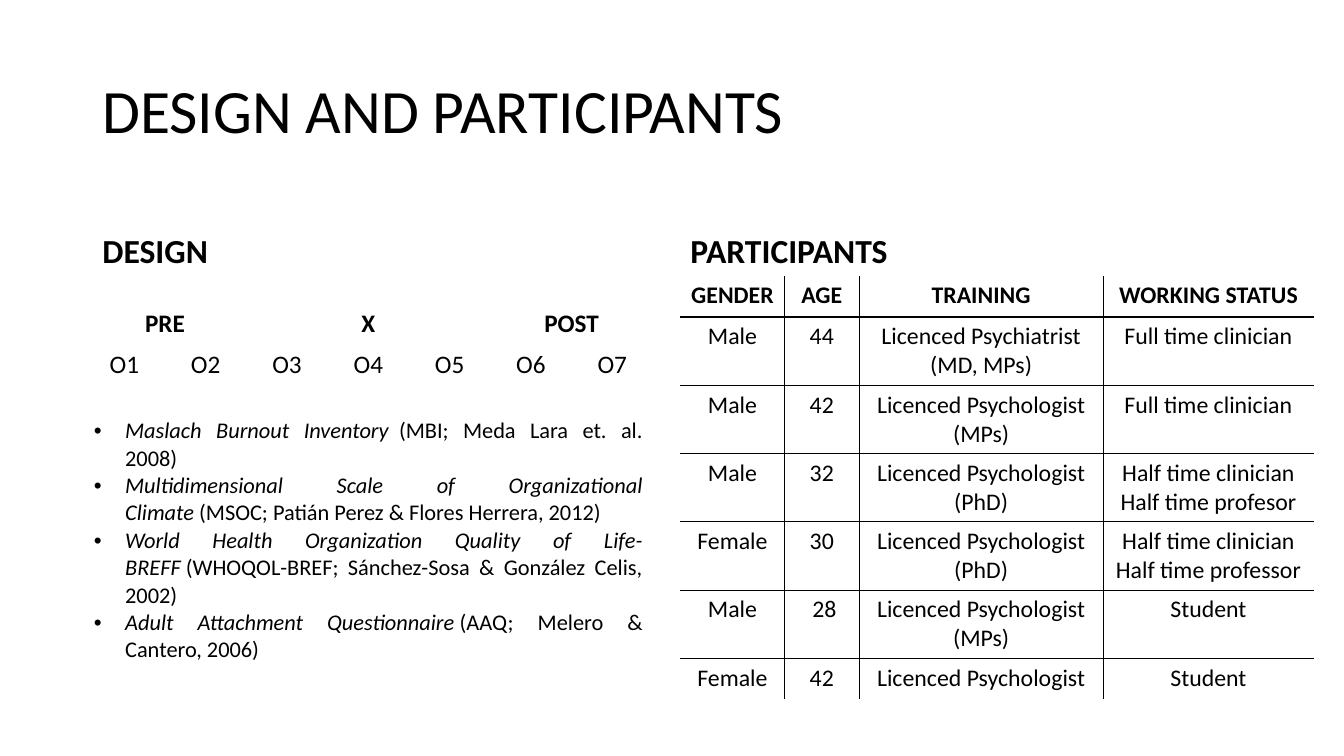
"""Build the slide on study design and participants."""
from lxml import etree
from pptx import Presentation
from pptx.dml.color import RGBColor
from pptx.enum.text import MSO_ANCHOR, PP_ALIGN
from pptx.oxml.ns import qn
from pptx.util import Cm, Pt

BLACK = RGBColor(0x00, 0x00, 0x00)
WHITE = RGBColor(0xFF, 0xFF, 0xFF)
CENTER, JUSTIFY = PP_ALIGN.CENTER, PP_ALIGN.JUSTIFY
MIDDLE, BOTTOM = MSO_ANCHOR.MIDDLE, MSO_ANCHOR.BOTTOM
FONT = "Calibri"
HARD_SPACE = chr(160)

TITLE = "DESIGN AND PARTICIPANTS"
HEADINGS = [("DESIGN", 2.33), ("PARTICIPANTS", 17.15)]
PHASES = [("PRE", 0, 1), ("X", 2, 4), ("POST", 5, 6)]
OBSERVATIONS = ["O1", "O2", "O3", "O4", "O5", "O6", "O7"]
INSTRUMENTS = [
    ("Maslach Burnout Inventory" + HARD_SPACE,
     "(MBI; Meda Lara et. al. 2008)"),
    ("Multidimensional Scale of Organizational Climate",
     "(MSOC; Patián Perez & Flores Herrera, 2012)"),
    ("World Health Organization Quality of Life-BREFF",
     "(WHOQOL-BREF; Sánchez-Sosa & González Celis, 2002)"),
    ("Adult Attachment Questionnaire", "(AAQ; Melero & Cantero, 2006)"),
]
PARTICIPANTS = [
    ("GENDER", "AGE", "TRAINING", "WORKING STATUS"),
    ("Male", "44", "Licenced Psychiatrist (MD, MPs)", "Full time clinician"),
    ("Male", "42", "Licenced Psychologist (MPs)", "Full time clinician"),
    ("Male", "32", "Licenced Psychologist (PhD)",
     "Half time clinician\nHalf time profesor"),
    ("Female", "30", "Licenced Psychologist (PhD)",
     "Half time clinician\nHalf time professor"),
    ("Male", " 28", "Licenced Psychologist (MPs)", "Student"),
    ("Female", "42", "Licenced Psychologist", "Student"),
]
DESIGN_WIDTHS = [2.05] * len(OBSERVATIONS)
PARTICIPANT_WIDTHS = [2.62, 1.88, 6.15, 5.31]
ROW_HEIGHT = 1.03
TALL_ROW_HEIGHT = 1.72
INDENT = Cm(0.79)


def style_span(span, size, bold=False, italic=False):
    span.font.name = FONT
    span.font.size = Pt(size)
    span.font.bold = bold
    span.font.italic = italic
    span.font.color.rgb = BLACK


def add_heading(page, text, left, top, width, height, size, bold, anchor):
    box = page.shapes.add_textbox(Cm(left), Cm(top), Cm(width), Cm(height))
    frame = box.text_frame
    frame.word_wrap = True
    frame.vertical_anchor = anchor
    frame.text = text
    para = frame.paragraphs[0]
    para.line_spacing = 0.9
    style_span(para.runs[0], size, bold)


def add_grid(page, left, top, widths, heights):
    frame = page.shapes.add_table(
        len(heights), len(widths), Cm(left), Cm(top),
        Cm(sum(widths)), Cm(sum(heights)))
    table = frame.table
    table.first_row = False
    table.horz_banding = False
    for column, width in zip(table.columns, widths):
        column.width = Cm(width)
    for row, height in zip(table.rows, heights):
        row.height = Cm(height)
    return table


def finish_cell(cell, left=WHITE, right=WHITE, top=WHITE, bottom=WHITE):
    properties = cell._tc.get_or_add_tcPr()
    edges = {"a:lnL": left, "a:lnR": right, "a:lnT": top, "a:lnB": bottom}
    for tag, color in edges.items():
        line = etree.SubElement(properties, qn(tag), w=str(Pt(1)))
        fill = etree.SubElement(line, qn("a:solidFill"))
        etree.SubElement(fill, qn("a:srgbClr"), val=str(color))
    cell.fill.solid()
    cell.fill.fore_color.rgb = WHITE


def fill_cell(cell, text, size, bold=False):
    cell.text_frame.text = text
    for para in cell.text_frame.paragraphs:
        para.alignment = CENTER
        style_span(para.runs[0], size, bold)


def add_design(page):
    table = add_grid(page, 2.11, 7.65, DESIGN_WIDTHS, [ROW_HEIGHT] * 3)
    for row in table.rows:
        for cell in row.cells:
            finish_cell(cell)
    for text, first, last in PHASES:
        table.cell(0, first).merge(table.cell(0, last))
        fill_cell(table.cell(0, first), text, 18, True)
    for index, text in enumerate(OBSERVATIONS):
        fill_cell(table.cell(1, index), text, 18)

    listing = table.cell(2, 0)
    listing.merge(table.cell(2, len(OBSERVATIONS) - 1))
    listing.margin_top = Cm(0.81)
    frame = listing.text_frame
    for index, (name, citation) in enumerate(INSTRUMENTS):
        para = frame.add_paragraph() if index else frame.paragraphs[0]
        para.alignment = JUSTIFY
        for text, italic in ((name, True), (HARD_SPACE + citation, False)):
            span = para.add_run()
            span.text = text
            style_span(span, 16, italic=italic)
        properties = para._p.get_or_add_pPr()
        properties.set("marL", str(INDENT))
        properties.set("indent", str(-INDENT))
        etree.SubElement(properties, qn("a:buFont"), typeface="Arial")
        etree.SubElement(properties, qn("a:buChar"), char="•")


def add_participants(page):
    last_row = len(PARTICIPANTS) - 1
    last_column = len(PARTICIPANT_WIDTHS) - 1
    heights = [ROW_HEIGHT, *[TALL_ROW_HEIGHT] * (last_row - 1), ROW_HEIGHT]
    table = add_grid(page, 17.15, 6.96, PARTICIPANT_WIDTHS, heights)
    for row, record in enumerate(PARTICIPANTS):
        for column, text in enumerate(record):
            cell = table.cell(row, column)
            fill_cell(cell, text, 17, row == 0)
            finish_cell(
                cell,
                left=BLACK if column > 0 else WHITE,
                right=BLACK if column < last_column else WHITE,
                top=BLACK if row > 0 else WHITE,
                bottom=BLACK if row < last_row else WHITE)


def main():
    deck = Presentation()
    deck.slide_width, deck.slide_height = Cm(33.87), Cm(19.05)
    page = deck.slides.add_slide(deck.slide_layouts[6])
    add_heading(page, TITLE, 2.33, 1.01, 29.21, 3.68, 44, False, MIDDLE)
    for text, left in HEADINGS:
        add_heading(page, text, left, 4.67, 14.35, 2.29, 24, True, BOTTOM)
    add_design(page)
    add_participants(page)
    deck.save("out.pptx")


if __name__ == "__main__":
    main()
